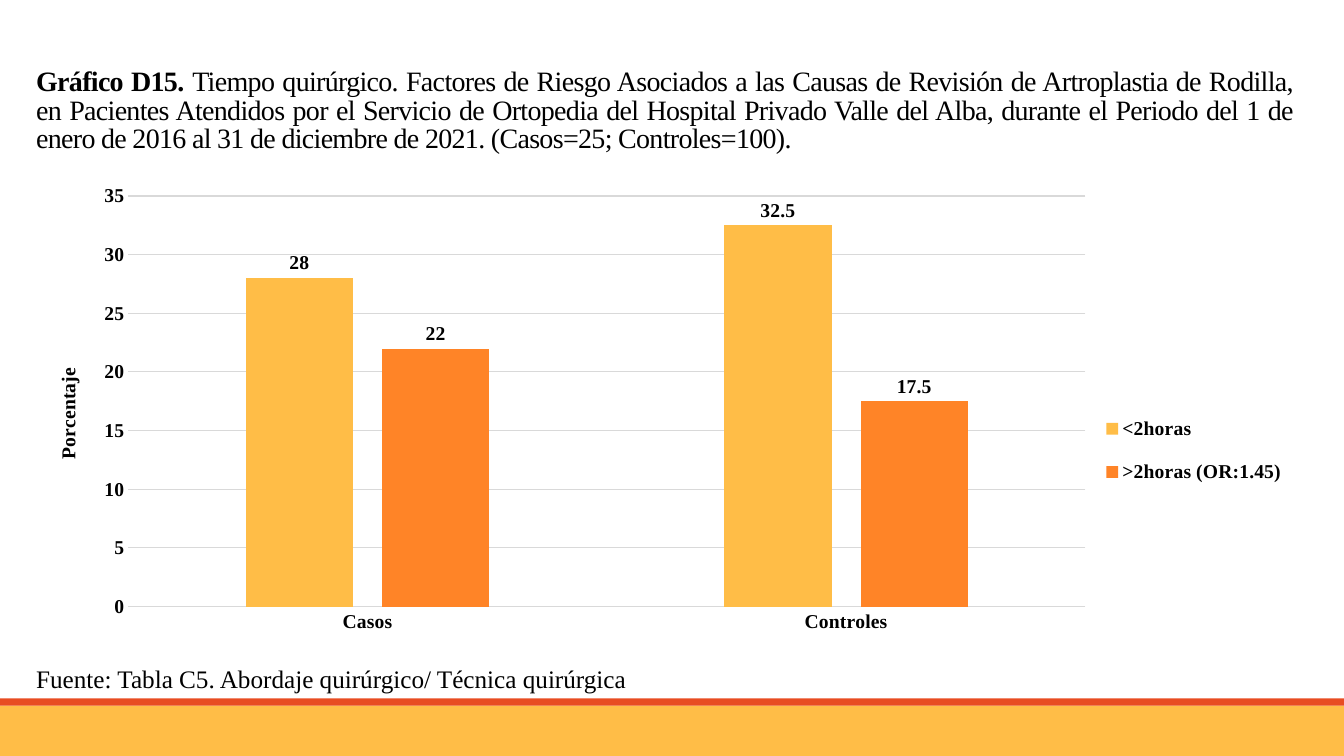
from pptx import Presentation
from pptx.chart.data import CategoryChartData
from pptx.dml.color import RGBColor
from pptx.enum.chart import XL_CHART_TYPE as ChartType, XL_LABEL_POSITION as LabelPosition
from pptx.enum.chart import XL_LEGEND_POSITION as LegendPosition, XL_TICK_MARK as TickMark
from pptx.enum.shapes import MSO_SHAPE as Shape
from pptx.enum.text import MSO_ANCHOR as Anchor, PP_ALIGN as Align
from pptx.oxml.ns import qn
from pptx.util import Cm, Pt

FONT = "Times New Roman"
BLACK, GRID, AMBER, ORANGE, RED = "000000", "D9D9D9", "FFBD47", "FF8427", "E84C22"
WIDTH, HEIGHT = 33.87, 19.05
MARGIN, CONTENT_WIDTH = 0.66, 32.16
CATEGORIES = ["Casos", "Controles"]
SERIES = [("<2horas", (28, 32.5), AMBER), (">2horas (OR:1.45)", (22, 17.5), ORANGE)]
TITLE_LABEL = "Gráfico D15. "
TITLE_TEXT = (
    "Tiempo quirúrgico. Factores de Riesgo Asociados a las Causas de Revisión de "
    "Artroplastia de Rodilla, en Pacientes Atendidos por el Servicio de Ortopedia del "
    "Hospital Privado Valle del Alba, durante el Periodo del 1 de enero de 2016 al 31 de "
    "diciembre de 2021. (Casos=25; Controles=100)."
)
SOURCE_TEXT = "Fuente: Tabla C5. Abordaje quirúrgico/ Técnica quirúrgica"


def color(hex_code):
    """Return the colour for a hex string."""
    return RGBColor.from_string(hex_code)


def apply_format(target, values):
    """Set each attribute of the target from a dict."""
    for name, value in values.items():
        setattr(target, name, value)


def style_font(font, size, bold=False):
    """Give a font the slide's typeface in black."""
    apply_format(font, {"name": FONT, "size": Pt(size), "bold": bold})
    font.color.rgb = color(BLACK)


def style_line(line):
    """Draw a thin grey chart line."""
    line.color.rgb = color(GRID)
    line.width = Pt(0.75)


def place_part(element, index, fractions, inner=False):
    """Fix a chart part at fractions of the chart's size."""
    layout = element.find(qn("c:layout"))
    if layout is None:
        layout = element.makeelement(qn("c:layout"), {})
        element.insert(index, layout)
    manual = layout.makeelement(qn("c:manualLayout"), {})
    layout.append(manual)
    settings = [("layoutTarget", "inner")] if inner else []
    settings += [("xMode", "edge"), ("yMode", "edge")]
    settings += zip("xywh", fractions)
    for name, value in settings:
        manual.append(manual.makeelement(qn(f"c:{name}"), {"val": str(value)}))


def add_footer(slide, left, top, width, height, stripe=0.18):
    """Add the footer band with its stripe on top."""
    bands = [(top + stripe, height - stripe, AMBER), (top, stripe, RED)]
    for band_top, band_height, fill in bands:
        shape = slide.shapes.add_shape(
            Shape.RECTANGLE, Cm(left), Cm(band_top), Cm(width), Cm(band_height))
        shape.shadow.inherit = False
        shape.fill.solid()
        shape.fill.fore_color.rgb = color(fill)
        shape.line.fill.background()


def add_text(slide, left, top, width, height, runs, size, frame_format, paragraph_format):
    """Add a one-paragraph text box from (text, bold, spacing) runs."""
    frame = slide.shapes.add_textbox(Cm(left), Cm(top), Cm(width), Cm(height)).text_frame
    apply_format(frame, {"word_wrap": True, **frame_format})
    paragraph = frame.paragraphs[0]
    apply_format(paragraph, paragraph_format)
    for text, bold, spacing in runs:
        run = paragraph.add_run()
        run.text = text
        style_font(run.font, size, bold)
        run.font._element.set("spc", str(spacing))


def style_axes(chart):
    """Format both axes, the gridlines and the value title."""
    for axis in (chart.category_axis, chart.value_axis):
        apply_format(axis, {"major_tick_mark": TickMark.NONE, "minor_tick_mark": TickMark.NONE})
        style_font(axis.tick_labels.font, 14, True)
    style_line(chart.category_axis.format.line)
    value_axis = chart.value_axis
    apply_format(value_axis, {"minimum_scale": 0, "maximum_scale": 35, "major_unit": 5})
    value_axis.format.line.fill.background()
    style_line(value_axis.major_gridlines.format.line)
    title = value_axis.axis_title
    title.text_frame.text = "Porcentaje"
    style_font(title.text_frame.paragraphs[0].runs[0].font, 14, True)
    place_part(title._element, 1, (0.02, 0.4))


def add_time_chart(slide, left, top, width, height):
    """Add the clustered columns of surgical time."""
    data = CategoryChartData()
    data.categories = CATEGORIES
    for name, values, _ in SERIES:
        data.add_series(name, values)
    chart = slide.shapes.add_chart(
        ChartType.COLUMN_CLUSTERED, Cm(left), Cm(top), Cm(width), Cm(height), data).chart
    apply_format(chart, {"has_title": False, "has_legend": True})
    style_font(chart.font, 14, True)
    style_axes(chart)
    plot = chart.plots[0]
    apply_format(plot, {"gap_width": 219, "overlap": -27, "vary_by_categories": False})
    for series, (_, _, fill) in zip(plot.series, SERIES):
        series.format.fill.solid()
        series.format.fill.fore_color.rgb = color(fill)
        labels = series.data_labels
        apply_format(labels, {"show_value": True, "position": LabelPosition.OUTSIDE_END})
        style_font(labels.font, 14, True)
    legend = chart.legend
    apply_format(legend, {"position": LegendPosition.RIGHT, "include_in_layout": False})
    style_font(legend.font, 14, True)
    place_part(legend._element, 1, (0.84, 0.47, 0.15, 0.23))
    plot_area = chart._chartSpace.chart.plotArea
    place_part(plot_area, 0, (0.08, 0.04, 0.75, 0.88), inner=True)


def main():
    """Build the slide and save it."""
    presentation = Presentation()
    apply_format(presentation, {"slide_width": Cm(WIDTH), "slide_height": Cm(HEIGHT)})
    slide = presentation.slides.add_slide(presentation.slide_layouts[6])
    add_footer(slide, 0, 17.6, WIDTH, HEIGHT - 17.6)
    add_text(slide, MARGIN, 0.79, CONTENT_WIDTH, 4.04,
             [(TITLE_LABEL, True, -50), (TITLE_TEXT, False, -50)], 20,
             {"vertical_anchor": Anchor.MIDDLE},
             {"alignment": Align.JUSTIFY, "line_spacing": 0.85})
    add_time_chart(slide, MARGIN, 4.47, CONTENT_WIDTH, 11.76)
    add_text(slide, MARGIN, 16.59, 18.62, 1.02, [(SOURCE_TEXT, False, 0)], 18,
             {"vertical_anchor": Anchor.TOP}, {"alignment": Align.LEFT})
    presentation.save("out.pptx")


if __name__ == "__main__":
    main()
